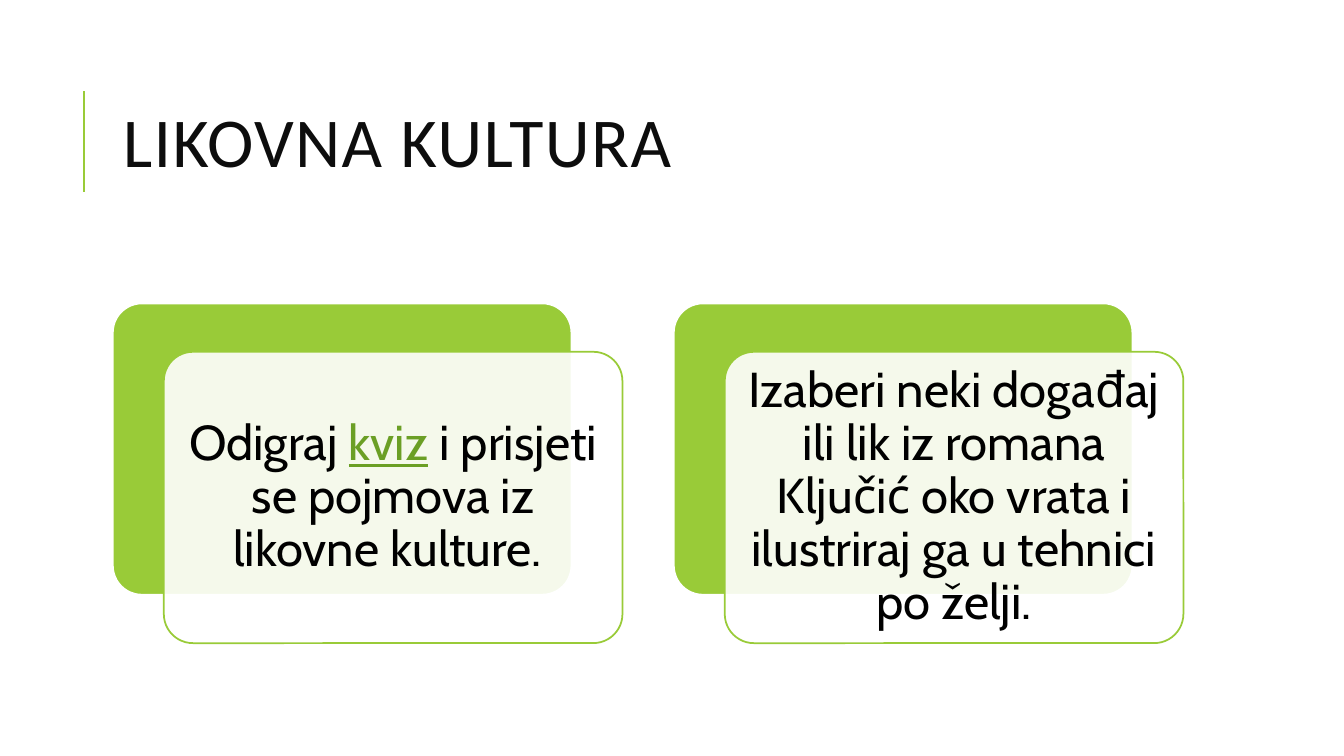
from lxml import etree
from pptx import Presentation
from pptx.dml.color import RGBColor
from pptx.enum import shapes, text
from pptx.oxml.ns import qn
from pptx.util import Pt

TITLE = "LIKOVNA KULTURA"
GREEN, LINK, WHITE, BLACK, INK = "99CB38", "6B9F25", "FFFFFF", "000000", "0D0D0D"
# Each card is a list of (text, colour, underlined) runs.
CARDS = [
    [("Odigraj ", BLACK, False), ("kviz", LINK, True),
     (" i prisjeti se pojmova iz likovne kulture. ", BLACK, False)],
    [("Izaberi neki događaj ili lik iz romana Ključić oko vrata "
      "i ilustriraj ga u tehnici po želji.", BLACK, False)],
]

LEFT, TOP, CARD_W, CARD_H = 80.6, 216.7, 327.6, 208.1
PITCH = 400.7
SHIFT_X, SHIFT_Y = 36.4, 34.6
INSET = 10.8


def rgb(value):
    return RGBColor.from_string(value)


def set_all(obj, **values):
    for name, value in values.items():
        setattr(obj, name, value)


def add_run(p, content, size, face, color, underline=False):
    r = p.add_run()
    r.text = content
    set_all(r.font, size=Pt(size), name=face, underline=underline)
    r.font.color.rgb = rgb(color)
    return r


def add_panel(slide, x, y, fill, line, opacity=100):
    sp = slide.shapes.add_shape(shapes.MSO_SHAPE.ROUNDED_RECTANGLE,
                                Pt(x), Pt(y), Pt(CARD_W), Pt(CARD_H))
    sp.adjustments[0] = 0.1
    sp.shadow.inherit = False
    sp.fill.solid()
    sp.fill.fore_color.rgb = rgb(fill)
    sp.line.color.rgb = rgb(line)
    sp.line.width = Pt(1.25)
    if opacity < 100:
        clr = sp._element.spPr.find(qn("a:solidFill"))[0]
        etree.SubElement(clr, qn("a:alpha")).set("val", str(opacity * 1000))
    return sp


def add_card(slide, x, y, runs):
    add_panel(slide, x, y, GREEN, WHITE)
    front = add_panel(slide, x + SHIFT_X, y + SHIFT_Y, WHITE, GREEN, opacity=90)
    tf = front.text_frame
    set_all(tf, word_wrap=True, vertical_anchor=text.MSO_ANCHOR.MIDDLE,
            margin_left=Pt(INSET), margin_right=Pt(INSET),
            margin_top=Pt(INSET), margin_bottom=Pt(INSET))
    p = tf.paragraphs[0]
    set_all(p, alignment=text.PP_ALIGN.CENTER, line_spacing=0.9)
    for content, color, underline in runs:
        add_run(p, content, 35, "Cabin", color, underline)


def add_title(slide):
    title = slide.shapes.title
    set_all(title, left=Pt(80.6), top=Pt(46), width=Pt(765.4), height=Pt(118))
    set_all(title.text_frame, word_wrap=True,
            vertical_anchor=text.MSO_ANCHOR.MIDDLE)
    p = title.text_frame.paragraphs[0]
    set_all(p, alignment=text.PP_ALIGN.LEFT, line_spacing=0.8)
    r = add_run(p, TITLE, 50, "Calibri", INK)
    r.font._element.set("spc", "100")

    rule = slide.shapes.add_connector(shapes.MSO_CONNECTOR.STRAIGHT,
                                      Pt(60), Pt(136.8), Pt(60), Pt(64.8))
    rule.line.color.rgb = rgb(GREEN)
    rule.line.width = Pt(1.5)
    etree.SubElement(rule._element.spPr, qn("a:effectLst"))


def main():
    prs = Presentation()
    set_all(prs, slide_width=Pt(960), slide_height=Pt(540))
    slide = prs.slides.add_slide(prs.slide_layouts[5])
    add_title(slide)
    for i, runs in enumerate(CARDS):
        add_card(slide, LEFT + i * PITCH, TOP, runs)
    prs.save("out.pptx")


if __name__ == "__main__":
    main()
